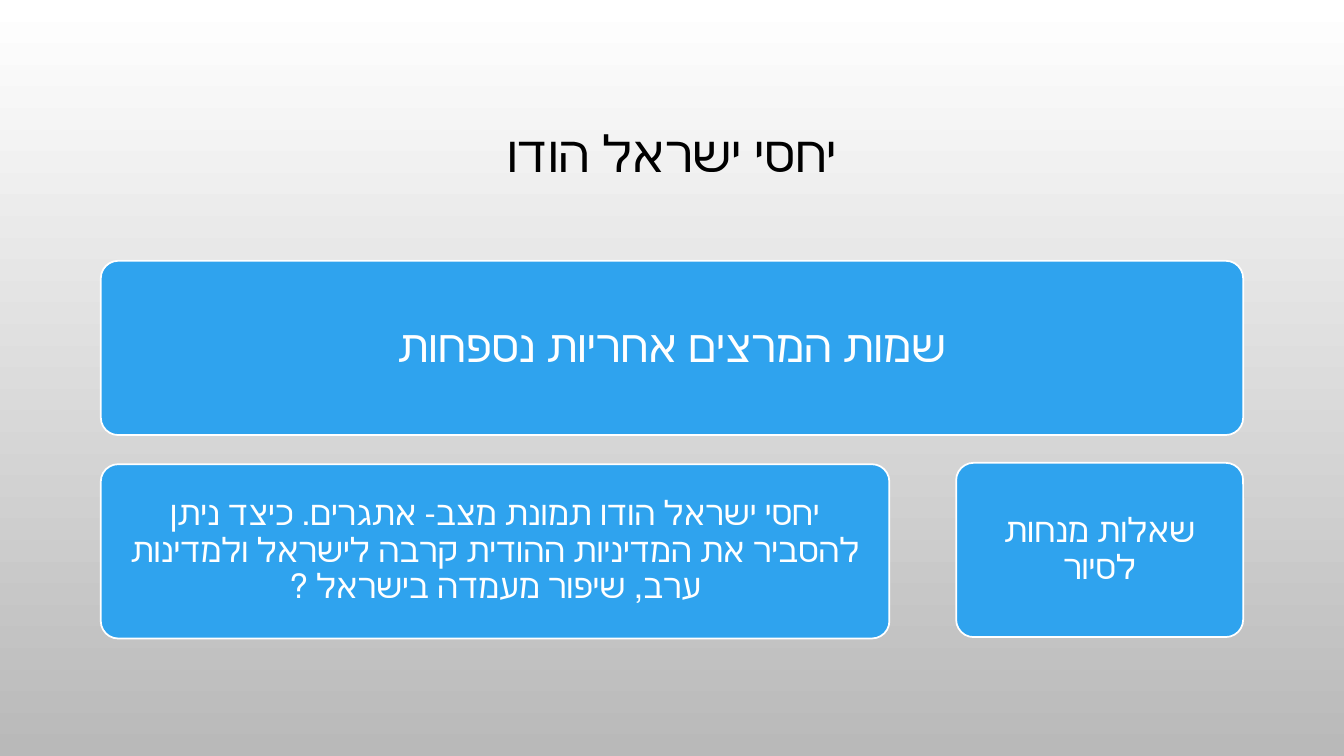
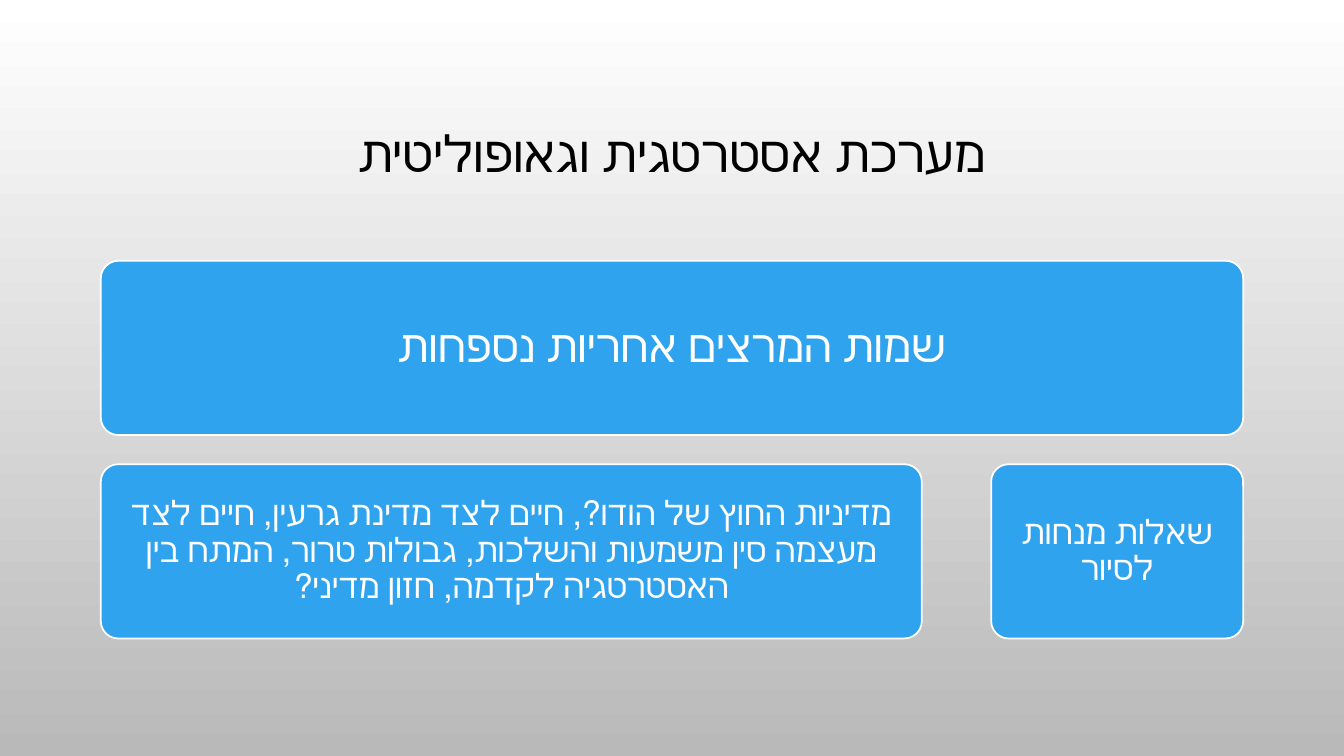
from pptx import Presentation
from pptx.dml.color import RGBColor
from pptx.enum import shapes, text
from pptx.util import Pt

FONT = "Calibri"
WHITE = RGBColor(0xFF, 0xFF, 0xFF)
GREY = RGBColor(0xB9, 0xB9, 0xB9)
BLACK = RGBColor(0, 0, 0)
BLUE = RGBColor(0x2F, 0xA3, 0xEE)

# Shared layout, in points
LEFT, WIDTH = 72, 816
TITLE_TOP, TITLE_HEIGHT = 48.6, 126
CARD_TOP, CARD_HEIGHT, CARD_STEP = 186.3, 124.5, 145.3

BANNER_TEXT = "שמות המרצים אחריות נספחות"
PROMPT_TEXT = "שאלות מנחות לסיור"


def write_hebrew(box, words, size, color):
    """Centre one right-to-left paragraph in the box."""
    frame = box.text_frame
    frame.word_wrap = True
    frame.vertical_anchor = text.MSO_ANCHOR.MIDDLE
    para = frame.paragraphs[0]
    para.text = words
    para.alignment = text.PP_ALIGN.CENTER
    para.line_spacing = 0.9
    para.font.name = FONT
    para.font.size = Pt(size)
    para.font.color.rgb = color
    # Reading direction
    para._p.get_or_add_pPr().set("rtl", "1")


def add_background(page):
    fill = page.background.fill
    fill.gradient()
    fill.gradient_angle = 270
    for stop, color in zip(fill.gradient_stops, (WHITE, GREY)):
        stop.color.rgb = color


def add_title(page, words):
    box = page.shapes.add_textbox(Pt(LEFT), Pt(TITLE_TOP), Pt(WIDTH), Pt(TITLE_HEIGHT))
    write_hebrew(box, words, 36, BLACK)


def add_card(page, left, top, width, words, size):
    card = page.shapes.add_shape(shapes.MSO_SHAPE.ROUNDED_RECTANGLE,
                                 Pt(left), Pt(top), Pt(width), Pt(CARD_HEIGHT))
    card.adjustments[0] = 0.1
    card.shadow.inherit = False
    card.fill.solid()
    card.fill.fore_color.rgb = BLUE
    card.line.color.rgb = WHITE
    card.line.width = Pt(1.25)
    frame = card.text_frame
    frame.margin_left = frame.margin_right = Pt(size * 0.3)
    frame.margin_top = frame.margin_bottom = Pt(size * 0.3)
    write_hebrew(card, words, size, WHITE)


def add_topic_page(deck, title, question, question_width, prompt_width, prompt_lift=0):
    page = deck.slides.add_slide(deck.slide_layouts[6])
    add_background(page)
    add_title(page, title)
    # Banner over a question and its prompt
    add_card(page, LEFT, CARD_TOP, WIDTH, BANNER_TEXT, 32)
    lower_top = CARD_TOP + CARD_STEP
    add_card(page, LEFT, lower_top, question_width, question, 24)
    add_card(page, LEFT + WIDTH - prompt_width, lower_top - prompt_lift,
             prompt_width, PROMPT_TEXT, 24)


def main():
    deck = Presentation()
    deck.slide_width, deck.slide_height = Pt(960), Pt(540)
    add_topic_page(
        deck, "יחסי ישראל הודו",
        "יחסי ישראל הודו תמונת מצב- אתגרים. כיצד ניתן להסביר את המדיניות ההודית "
        "קרבה לישראל ולמדינות ערב, שיפור מעמדה בישראל ?",
        563.3, 205, prompt_lift=1)
    add_topic_page(
        deck, "מערכת אסטרטגית וגאופוליטית",
        "מדיניות החוץ של הודו?, חיים לצד מדינת גרעין, חיים לצד מעצמה סין משמעות "
        "והשלכות, גבולות טרור, המתח בין האסטרטגיה לקדמה, חזון מדיני?",
        586.5, 180)
    deck.save("out.pptx")


if __name__ == "__main__":
    main()
